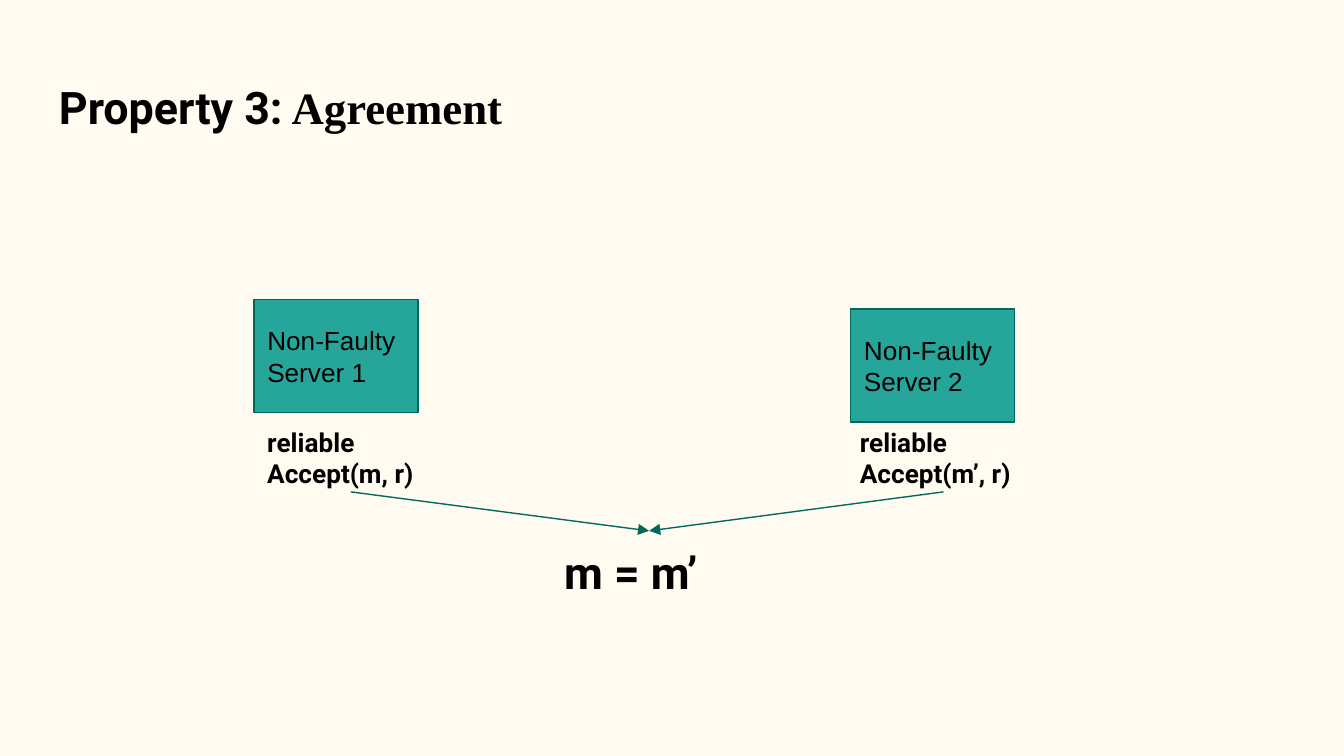
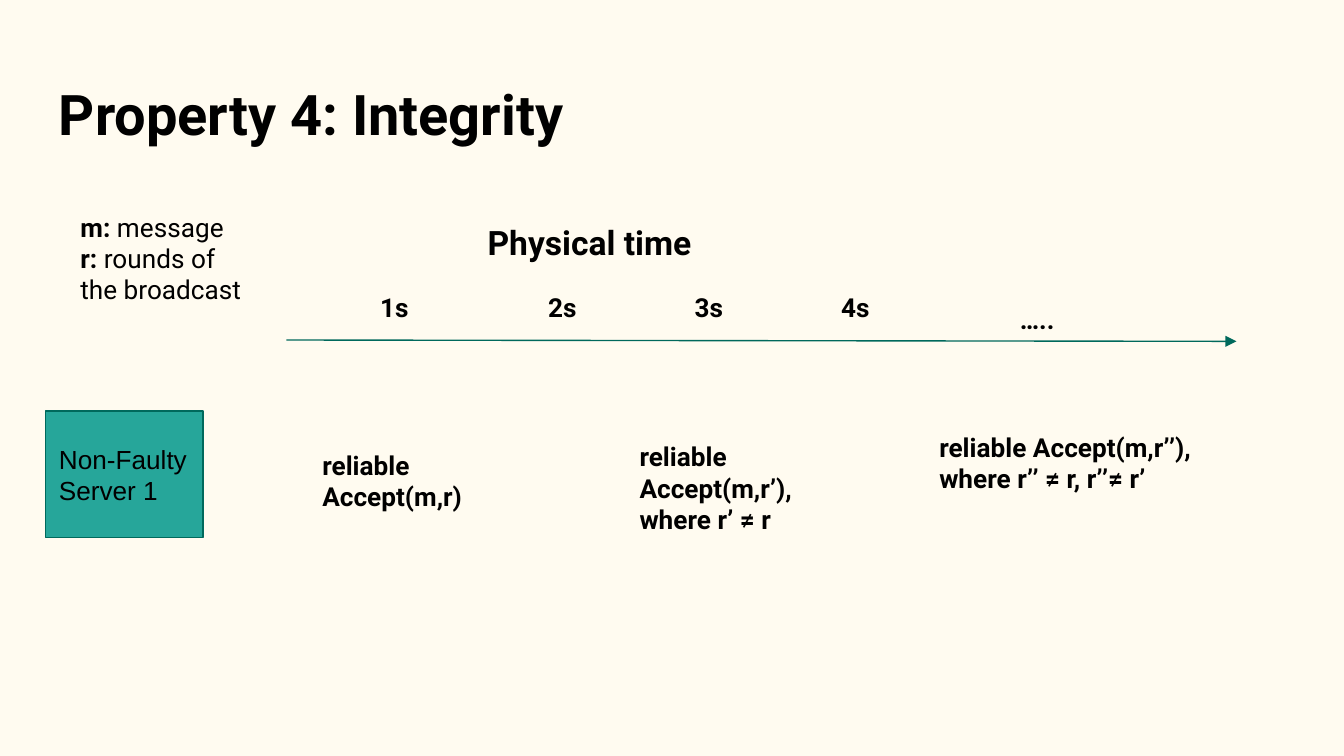
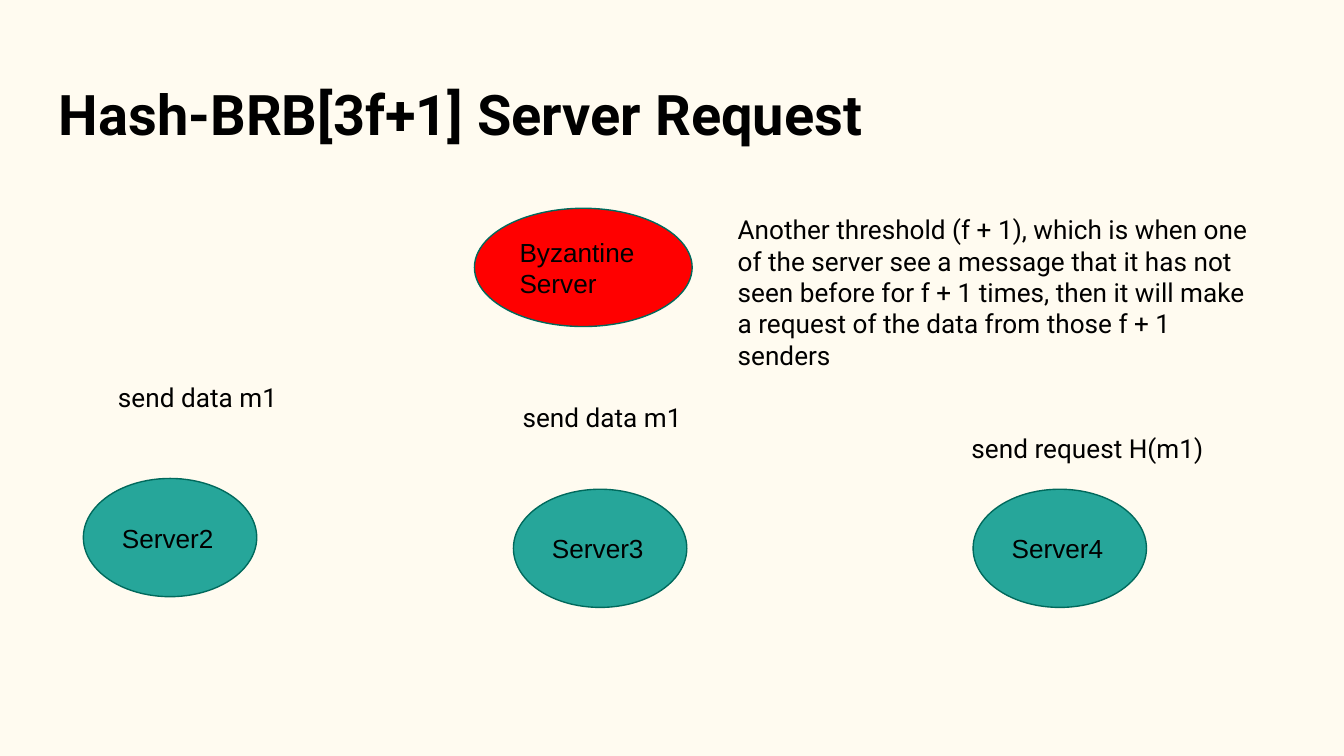
import collections

import pptx
import pptx.dml.color
import pptx.enum.shapes
import pptx.enum.text
import pptx.oxml
import pptx.oxml.ns
import pptx.util

PX = pptx.util.Inches(1) // 200
INSET = 20

CREAM = "FFFBF0"
TEAL = "26A69A"
DARK_TEAL = "00695C"
RED = "FF0000"
BLACK = "000000"

BODY_FONT = "Roboto"
NODE_FONT = "Arial"
SERIF_FONT = "Times New Roman"
BODY_SIZE = 14

RECTANGLE = pptx.enum.shapes.MSO_SHAPE.RECTANGLE
ELLIPSE = pptx.enum.shapes.MSO_SHAPE.OVAL

Box = collections.namedtuple("Box", "left top width height")
Run = collections.namedtuple("Run", "text font size bold",
                             defaults=(BODY_FONT, BODY_SIZE, False))

TITLE_BOX = Box(68, 98, 1864, 134)


def color(value):
    return pptx.dml.color.RGBColor.from_string(value)


def within(box, left, top, width, height):
    return Box(box.left + left, box.top + top, width, height)


def emu(box):
    return [length * PX for length in box]


def write(frame, paragraphs, indent=0):
    frame.word_wrap = True
    frame.margin_left = frame.margin_right = INSET * PX
    frame.margin_top = frame.margin_bottom = INSET * PX
    for index, runs in enumerate(paragraphs):
        paragraph = frame.add_paragraph() if index else frame.paragraphs[0]
        paragraph.alignment = pptx.enum.text.PP_ALIGN.LEFT
        if indent:
            paragraph._p.get_or_add_pPr().set("marL", str(indent * PX))
        for part in runs:
            run = paragraph.add_run()
            run.text = part.text
            run.font.name = part.font
            run.font.size = pptx.util.Pt(part.size)
            run.font.bold = part.bold
            run.font.color.rgb = color(BLACK)


def add_text(slide, box, *paragraphs, indent=0):
    frame = slide.shapes.add_textbox(*emu(box)).text_frame
    write(frame, paragraphs, indent)


def add_label(slide, box, text, size=BODY_SIZE, bold=True, indent=0):
    add_text(slide, box, [Run(text, size=size, bold=bold)], indent=indent)


def add_title(slide, text, size=30):
    add_label(slide, TITLE_BOX, text, size)


def add_server(slide, box, *lines, outline=RECTANGLE, fill=TEAL):
    server = slide.shapes.add_shape(outline, *emu(box))
    server.shadow.inherit = False
    server.fill.solid()
    server.fill.fore_color.rgb = color(fill)
    server.line.color.rgb = color(DARK_TEAL)
    server.line.width = pptx.util.Pt(0.75)
    server.text_frame.vertical_anchor = pptx.enum.text.MSO_ANCHOR.MIDDLE
    write(server.text_frame, [[Run(line, NODE_FONT)] for line in lines])


def add_arrow(slide, start, end):
    points = [length * PX for length in (*start, *end)]
    arrow = slide.shapes.add_connector(
        pptx.enum.shapes.MSO_CONNECTOR.STRAIGHT, *points)
    arrow.line.color.rgb = color(DARK_TEAL)
    arrow.line.width = pptx.util.Pt(0.75)
    head = pptx.oxml.parse_xml(
        '<a:tailEnd %s type="triangle"/>' % pptx.oxml.ns.nsdecls("a"))
    arrow.line._get_or_add_ln().append(head)
    no_shadow = pptx.oxml.parse_xml(
        "<a:effectLst %s/>" % pptx.oxml.ns.nsdecls("a"))
    arrow._element.spPr.append(no_shadow)


def draw_agreement(slide, box):
    meeting = (box.left + 588, box.top + 344)
    servers = [
        ("Server 1", 0, 0, "reliable Accept(m, r)", 0),
        ("Server 2", 888, 14, "reliable Accept(m’, r)", 882),
    ]
    for server, left, top, accept, accept_left in servers:
        add_server(slide, within(box, left, top, 244, 168), "Non-Faulty", server)
        accept_box = within(box, accept_left, 168, 292, 118)
        add_label(slide, accept_box, accept)
        bottom = accept_box.top + accept_box.height
        add_arrow(slide, (accept_box.left + 144, bottom), meeting)
    add_label(slide, within(box, 376, 344, 428, 134), "m = m’", 24, indent=66)


def draw_legend(slide, box):
    add_text(slide, box,
             [Run("m:", bold=True), Run(" message")],
             [Run("r:", bold=True), Run(" rounds of the broadcast")])


def draw_timeline(slide, box):
    add_label(slide, within(box, 280, 0, 440, 84), "Physical time", 18)
    ticks = [("1s", 120, 104), ("2s", 370, 104), ("3s", 588, 104),
             ("4s", 806, 104), ("…..", 1072, 122)]
    for tick, left, top in ticks:
        add_label(slide, within(box, left, top, 220, 58), tick)
    bottom = box.top + box.height
    add_arrow(slide, (box.left, bottom - 2), (box.left + box.width, bottom))


def draw_deliveries(slide, box):
    add_server(slide, within(box, 0, 0, 234, 188), "Non-Faulty Server 1")
    deliveries = [
        ("reliable Accept(m,r)", 392, 36, 292, 118),
        ("reliable Accept(m,r’), where r’ ≠ r", 864, 24, 336, 158),
        ("reliable Accept(m,r’’), where r’’ ≠ r, r’’≠ r’", 1310, 10, 424, 188),
    ]
    for delivery, *place in deliveries:
        add_label(slide, within(box, *place), delivery)


def draw_server_request(slide, box):
    add_server(slide, within(box, 582, 12, 324, 176), "Byzantine Server",
               outline=ELLIPSE, fill=RED)
    servers = [("Server2", 0, 414), ("Server3", 640, 430), ("Server4", 1324, 430)]
    for server, left, top in servers:
        add_server(slide, within(box, left, top, 258, 176), server, outline=ELLIPSE)
    messages = [
        ("Another threshold (f + 1), which is when one of the server see a "
         "message that it has not seen before for f + 1 times, then it will "
         "make a request of the data from those f + 1 senders",
         954, 0, 802, 272),
        ("send request H(m1)", 1302, 326, 454, 88),
        ("send data m1", 32, 250, 294, 134),
        ("send data m1", 634, 280, 294, 134),
    ]
    for message, *place in messages:
        add_label(slide, within(box, *place), message, bold=False)


def agreement_slide(slide):
    add_text(slide, TITLE_BOX, [Run("Property 3:", size=24, bold=True),
                                Run(" Agreement", SERIF_FONT, 24, True)])
    draw_agreement(slide, Box(378, 446, 1132, 478))


def integrity_slide(slide):
    add_title(slide, "Property 4: Integrity")
    draw_legend(slide, Box(100, 294, 290, 178))
    draw_timeline(slide, Box(426, 310, 1414, 198))
    draw_deliveries(slide, Box(68, 612, 1734, 198))


def request_slide(slide):
    add_title(slide, "Hash-BRB[3f+1] Server Request")
    draw_server_request(slide, Box(124, 298, 1756, 606))


def main():
    deck = pptx.Presentation()
    deck.slide_width, deck.slide_height = 2000 * PX, 1125 * PX
    backdrop = deck.slide_master.background.fill
    backdrop.solid()
    backdrop.fore_color.rgb = color(CREAM)
    for build in (agreement_slide, integrity_slide, request_slide):
        build(deck.slides.add_slide(deck.slide_layouts[6]))
    deck.save("out.pptx")


if __name__ == "__main__":
    main()
